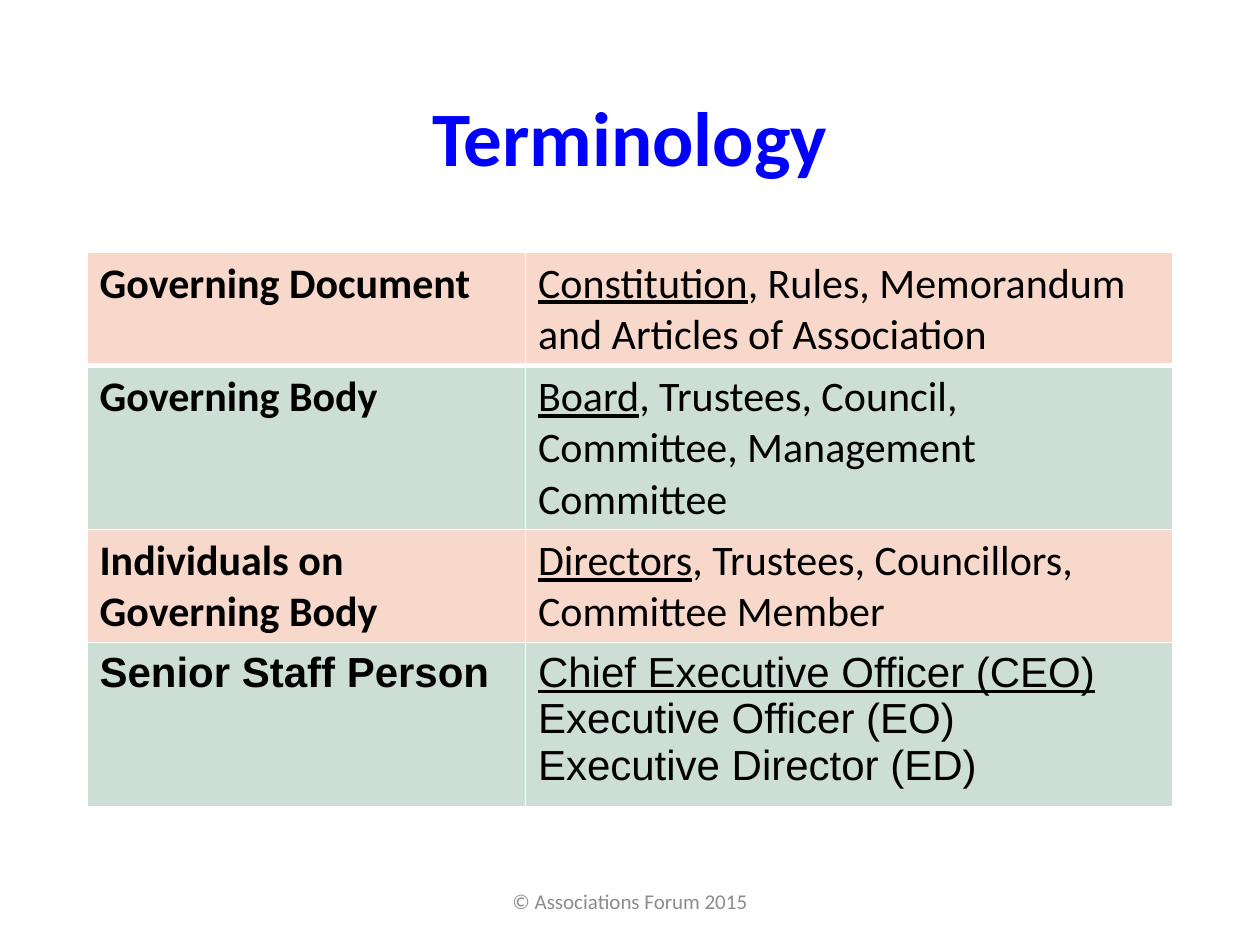
from dataclasses import dataclass

import pptx
import pptx.dml.color
import pptx.enum.text
import pptx.oxml
import pptx.oxml.ns
import pptx.util

Inches = pptx.util.Inches
Pt = pptx.util.Pt
RGBColor = pptx.dml.color.RGBColor
Align = pptx.enum.text.PP_ALIGN

BLUE = RGBColor(0x00, 0x00, 0xFF)
BLACK = RGBColor(0x00, 0x00, 0x00)
GREY = RGBColor(0x8C, 0x8C, 0x8C)
WHITE = RGBColor(0xFF, 0xFF, 0xFF)
PEACH = RGBColor(0xF8, 0xD8, 0xCA)
SAGE = RGBColor(0xCD, 0xDE, 0xD6)


@dataclass
class Term:
    name: str
    usual: str
    rest: str
    others: tuple[str, ...] = ()
    height: float = 0.9
    font: str = "Calibri"


TERMS = [
    Term("Governing Document", "Constitution",
         ", Rules, Memorandum and Articles of Association"),
    Term("Governing Body", "Board",
         ", Trustees, Council, Committee, Management Committee", height=1.29),
    Term("Individuals on Governing Body", "Directors",
         ", Trustees, Councillors, Committee Member"),
    Term("Senior Staff Person", "Chief Executive Officer (CEO)", "",
         ("Executive Officer (EO)", "Executive Director (ED)"),
         height=1.3, font="Arial"),
]
WIDTHS = (3.48, 5.14)


def write(para, text: str, *, size: float = 24, font: str = "Calibri",
          color: RGBColor = BLACK, bold: bool = False,
          under: bool = False) -> None:
    run = para.add_run()
    run.text = text
    run.font.size = Pt(size)
    run.font.name = font
    run.font.color.rgb = color
    run.font.bold = bold
    run.font.underline = under


def add_line(slide, text: str, left: float, top: float, width: float,
             height: float, space: float = 1.0, **style) -> None:
    """Add a centred one-line text box."""
    box = slide.shapes.add_textbox(
        Inches(left), Inches(top), Inches(width), Inches(height))
    frame = box.text_frame
    frame.word_wrap = True
    frame.vertical_anchor = pptx.enum.text.MSO_ANCHOR.MIDDLE
    para = frame.paragraphs[0]
    para.alignment = Align.CENTER
    para.line_spacing = space
    write(para, text, **style)


def paint(cell, fill: RGBColor, top: float, bottom: float) -> None:
    """Set the borders, then the fill, in the order the schema asks for."""
    props = cell._tc.get_or_add_tcPr()
    for side, width in (("L", 1), ("R", 1), ("T", top), ("B", bottom)):
        props.append(pptx.oxml.parse_xml(
            f'<a:ln{side} {pptx.oxml.ns.nsdecls("a")} w="{Pt(width)}">'
            f'<a:solidFill><a:srgbClr val="{WHITE}"/></a:solidFill>'
            f'</a:ln{side}>'))
    cell.fill.solid()
    cell.fill.fore_color.rgb = fill


def add_terms(slide, left: float, top: float) -> None:
    table = slide.shapes.add_table(
        len(TERMS), len(WIDTHS), Inches(left), Inches(top),
        Inches(sum(WIDTHS)), Inches(sum(t.height for t in TERMS))).table
    for col, width in zip(table.columns, WIDTHS):
        col.width = Inches(width)
    for i, term in enumerate(TERMS):
        table.rows[i].height = Inches(term.height)
        name, words = table.cell(i, 0), table.cell(i, 1)
        for cell in (name, words):
            paint(cell, SAGE if i % 2 else PEACH,
                  top=3 if i == 1 else 1, bottom=3 if i == 0 else 1)
        write(name.text_frame.paragraphs[0], term.name,
              font=term.font, bold=True)
        para = words.text_frame.paragraphs[0]
        write(para, term.usual, font=term.font, under=True)
        if term.rest:
            write(para, term.rest, font=term.font)
        for other in term.others:
            write(words.text_frame.add_paragraph(), other, font=term.font)


def main() -> None:
    deck = pptx.Presentation()
    deck.slide_width, deck.slide_height = Inches(10), Inches(7.5)
    slide = deck.slides.add_slide(deck.slide_layouts[6])
    add_line(slide, "Terminology", 0.69, 0.4, 8.62, 1.45, space=0.9,
             size=44, color=BLUE, bold=True)
    add_terms(slide, 0.69, 2)
    add_line(slide, "© Associations Forum 2015", 3.31, 6.95, 3.38, 0.4,
             size=12, color=GREY)
    deck.save("out.pptx")


if __name__ == "__main__":
    main()
